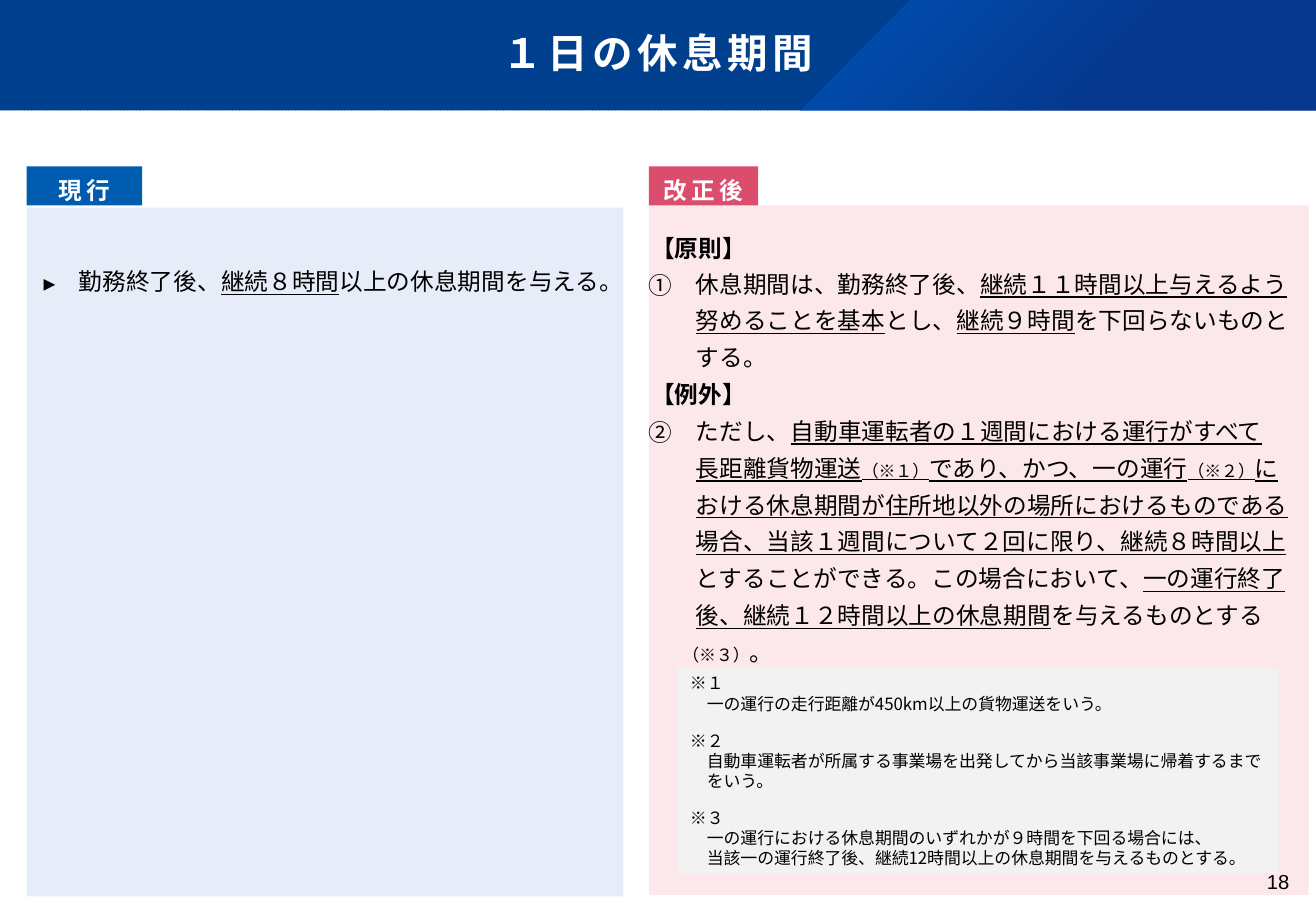
import copy

import lxml.etree
import pptx
import pptx.dml.color
import pptx.enum.dml
import pptx.enum.shapes
import pptx.enum.text
import pptx.oxml
import pptx.oxml.ns
import pptx.util

Inches = pptx.util.Inches
Pt = pptx.util.Pt
ALIGN = pptx.enum.text.PP_ALIGN
ANCHOR = pptx.enum.text.MSO_ANCHOR
SHAPE = pptx.enum.shapes.MSO_SHAPE

GOTHIC = "Noto Sans CJK JP"
BODY = {"size": 14, "name": GOTHIC, "color": "000000"}
HEADING = {**BODY, "bold": True}
NOTE = {**BODY, "size": 10}
TITLE = {"size": 24, "name": GOTHIC, "color": "FFFFFF", "bold": True, "spacing": 2.7}
LABEL = {**TITLE, "size": 14, "spacing": 2.4}
PAGE = {"size": 12, "name": "Arial", "color": "000000"}
UNDER = {"underline": True}
UNDER_SMALL = {"underline": True, "size": 10}
SMALL = {"size": 10}

PRINCIPLE = [
    ("休息期間は、勤務終了後、", {}), ("継続１１時間以上与えるよう\n努めることを基本", UNDER),
    ("とし、", {}), ("継続９時間", UNDER), ("を下回らないものと\nする。", {}),
]
EXCEPTION = [
    ("ただし、", {}), ("自動車運転者の１週間における運行がすべて\n長距離貨物運送", UNDER),
    ("（※１）", UNDER_SMALL), ("であり、かつ、一の運行", UNDER), ("（※２）", UNDER_SMALL),
    ("に\nおける休息期間が住所地以外の場所におけるものである\n"
     "場合、当該１週間について２回に限り、継続８時間以上\n", UNDER),
    ("とすることができる。この場合において、", {}),
    ("一の運行終了\n後、継続１２時間以上の休息期間", UNDER), ("を与えるものとする", {}),
]
NOTES = [
    ("※１", "一の運行の走行距離が450km以上の貨物運送をいう。"),
    ("※２", "自動車運転者が所属する事業場を出発してから当該事業場に帰着するまで\nをいう。"),
    ("※３", "一の運行における休息期間のいずれかが９時間を下回る場合には、\n"
           "当該一の運行終了後、継続12時間以上の休息期間を与えるものとする。"),
]


def rgb(color):
    return pptx.dml.color.RGBColor.from_string(color)


def style_run(run, values):
    font = run.font
    plain = {key: value for key, value in values.items() if key not in ("color", "spacing", "size")}
    for key, value in plain.items():
        setattr(font, key, value)
    font.size = Pt(values["size"])
    font.color.rgb = rgb(values["color"])
    properties = run._r.get_or_add_rPr()
    if "spacing" in values:
        properties.set("spc", str(round(values["spacing"] * 100)))
    east_asian = lxml.etree.SubElement(properties, pptx.oxml.ns.qn("a:ea"))
    east_asian.set("typeface", values["name"])


def write(frame, runs, style, layout=None, indent=0, bullet=None):
    paragraph = frame.paragraphs[0]
    if paragraph.runs:
        paragraph = frame.add_paragraph()
    for key, value in {"alignment": ALIGN.LEFT, **(layout or {})}.items():
        setattr(paragraph, key, value)
    properties = paragraph._p.get_or_add_pPr()
    properties.set("marL", str(Pt(indent)))
    properties.set("indent", str(-Pt(indent) if bullet else 0))
    if bullet:
        for tag, key, value in (("a:buFont", "typeface", GOTHIC), ("a:buChar", "char", bullet)):
            lxml.etree.SubElement(properties, pptx.oxml.ns.qn(tag)).set(key, value)
    for text, changes in runs:
        for index, line in enumerate(text.split("\n")):
            if index:
                paragraph.add_line_break()
                line_break = paragraph._p.findall(pptx.oxml.ns.qn("a:br"))[-1]
                line_break.append(copy.deepcopy(paragraph.runs[-1]._r.rPr))
            if line:
                run = paragraph.add_run()
                run.text = line
                style_run(run, {**style, **changes})


def add_panel(slide, box, color, kind=SHAPE.RECTANGLE):
    panel = slide.shapes.add_shape(kind, *map(Inches, box))
    panel.shadow.inherit = False
    panel.line.fill.background()
    panel.fill.solid()
    panel.fill.fore_color.rgb = rgb(color)
    panel.text_frame.vertical_anchor = ANCHOR.MIDDLE
    return panel


def add_text(slide, box, **settings):
    frame = slide.shapes.add_textbox(*map(Inches, box)).text_frame
    for key, value in {"word_wrap": True, **settings}.items():
        setattr(frame, key, value)
    return frame


def add_title_band(slide, box, title):
    left, top, width, height = box
    band = add_panel(slide, box, "004292")
    band.fill.patterned()
    band.fill.pattern = pptx.enum.dml.MSO_PATTERN.DARK_UPWARD_DIAGONAL
    band.fill.fore_color.rgb = rgb("003579")
    band.fill.back_color.rgb = rgb("004292")

    right, bottom = left + width, top + height
    outline = slide.shapes.build_freeform(Inches(left + 7.49), Inches(top), scale=1.0)
    corners = [(right, top), (right, bottom), (left + 6.58, bottom)]
    outline.add_line_segments([(Inches(x), Inches(y)) for x, y in corners], close=True)
    sheen = outline.convert_to_shape()
    sheen.shadow.inherit = False
    sheen.line.fill.background()
    sheen.fill.background()
    stops = "".join(
        f'<a:gs pos="{position * 1000}"><a:srgbClr val="{color}">'
        f'<a:alpha val="{opacity * 1000}"/></a:srgbClr></a:gs>'
        for position, color, opacity in ((0, "0064DF", 50), (62, "0C338E", 55), (100, "0C338E", 55))
    )
    gradient = pptx.oxml.parse_xml(
        f'<a:gradFill {pptx.oxml.ns.nsdecls("a")} rotWithShape="1"><a:gsLst>{stops}</a:gsLst>'
        '<a:path path="circle"><a:fillToRect r="100000" b="100000"/></a:path></a:gradFill>'
    )
    properties = sheen._element.spPr
    properties.replace(properties.find(pptx.oxml.ns.qn("a:noFill")), gradient)

    frame = add_text(slide, box, vertical_anchor=ANCHOR.MIDDLE)
    write(frame, [(title, {})], TITLE, {"alignment": ALIGN.CENTER, "line_spacing": 0.9})


def add_column(slide, box, color, label, label_width, label_color):
    left, top, _, _ = box
    add_panel(slide, box, color)
    tab = add_panel(slide, (left, 1.37, label_width, 0.32), label_color, SHAPE.ROUNDED_RECTANGLE)
    tab.adjustments[0] = 0
    layout = {"alignment": ALIGN.CENTER, "line_spacing": 1.3, "space_after": Pt(8)}
    write(tab.text_frame, [(label, {})], LABEL, layout)


def add_current_rule(slide, box):
    left, top, width, _ = box
    add_column(slide, box, "E7ECF9", "現行", 0.95, "005CAF")
    frame = add_text(slide, (left + 0.04, top + 0.37, width + 0.17, 0.4))
    rule = [("勤務終了後、", {}), ("継続８時間", UNDER), ("以上の休息期間を与える。", {})]
    write(frame, rule, BODY, {"line_spacing": 1.3}, 21, "▸")


def add_revised_rule(slide, box):
    left, top, _, _ = box
    add_column(slide, box, "FCE8EB", "改正後", 0.9, "DB4D6D")
    frame = add_text(slide, (left - 0.1, top + 0.41, 5.66, 3.45))
    spacing = {"line_spacing": 1.3}
    write(frame, PRINCIPLE, BODY, spacing, 28, "①")
    write(frame, EXCEPTION, BODY, {**spacing, "space_before": Pt(21.8)}, 28, "②")
    write(frame, [("（※３）", SMALL), ("。", {})], BODY, spacing, 20)

    notes = add_panel(slide, (left + 0.24, top + 3.81, 4.94, 1.69), "F2F2F2").text_frame
    for index, (mark, text) in enumerate(NOTES):
        write(notes, [(mark, {})], NOTE, {"space_before": Pt(9.8 if index else 0)})
        write(notes, [(text, {})], NOTE, indent=10)

    for heading, offset in (("【原則】", 0.14), ("【例外】", 1.34)):
        frame = add_text(slide, (left - 0.08, top + offset, 0.99, 0.37), word_wrap=False,
                         auto_size=pptx.enum.text.MSO_AUTO_SIZE.SHAPE_TO_FIT_TEXT)
        write(frame, [(heading, {})], HEADING, {"line_spacing": 1.2, "space_after": Pt(6)})


def add_page_number(slide, box, number):
    margins = dict.fromkeys(("margin_left", "margin_top", "margin_right", "margin_bottom"), 0)
    frame = add_text(slide, box, **margins)
    write(frame, [(number, {})], PAGE, {"alignment": ALIGN.RIGHT})


def main():
    deck = pptx.Presentation()
    deck.slide_width, deck.slide_height = Inches(10.83), Inches(7.5)
    slide = deck.slides.add_slide(deck.slide_layouts[6])
    add_title_band(slide, (0, 0, 10.83, 0.91), "１日の休息期間")
    add_current_rule(slide, (0.22, 1.71, 4.91, 5.67))
    add_revised_rule(slide, (5.34, 1.69, 5.43, 5.68))
    add_page_number(slide, (9.92, 7.16, 0.69, 0.3), "18")
    deck.save("out.pptx")


if __name__ == "__main__":
    main()
